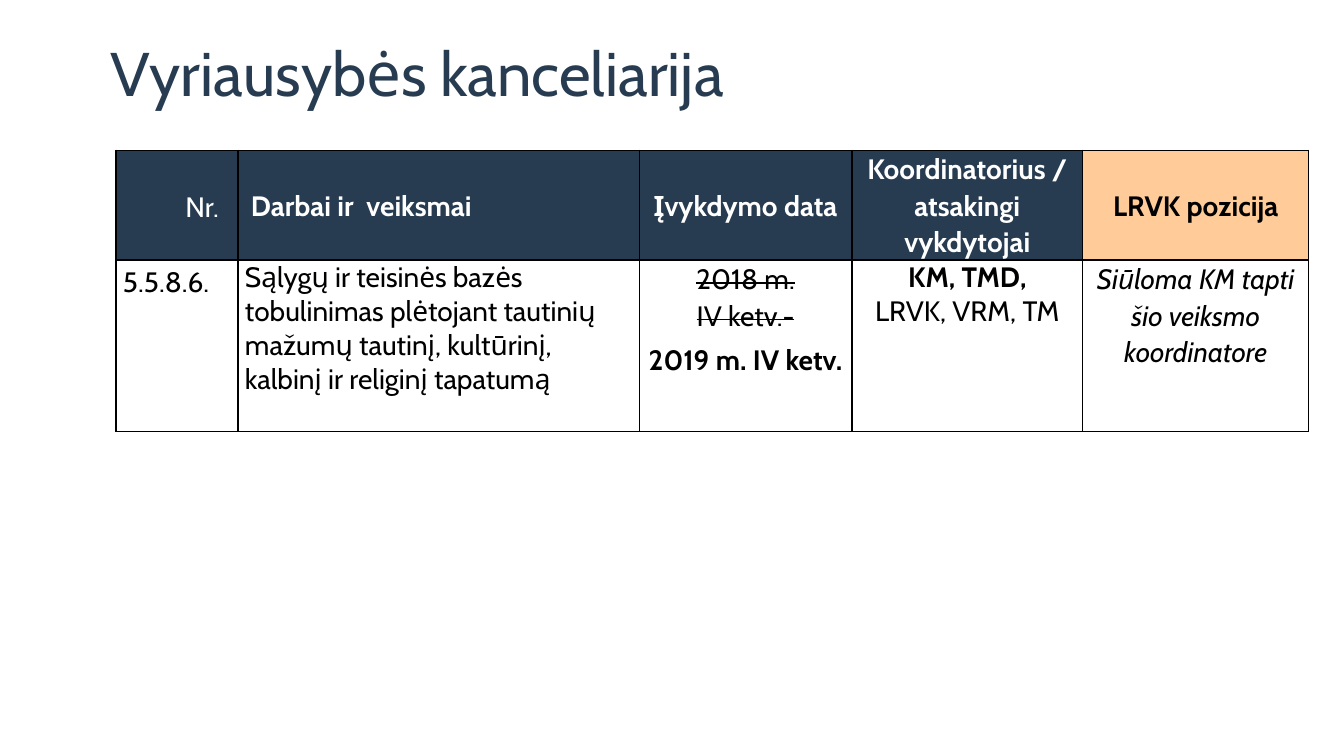
from dataclasses import dataclass

from lxml import etree
from pptx import Presentation
from pptx import util as u
from pptx.dml.color import RGBColor
from pptx.enum import text
from pptx.oxml.ns import qn

LEFT, CENTER, JUSTIFY = (text.PP_ALIGN.LEFT, text.PP_ALIGN.CENTER,
                         text.PP_ALIGN.JUSTIFY)


@dataclass(frozen=True)
class Theme:
    font: str = "Cabin"
    navy: str = "273B51"
    peach: str = "FFCC99"
    white: str = "FFFFFF"
    black: str = "000000"
    title_size: int = 44
    body_size: int = 20
    border: float = 1


class SlideBuilder:
    def __init__(self, prs, theme):
        self.theme = theme
        self.s = prs.slides.add_slide(prs.slide_layouts[5])

    def run(self, p, content, color, size, bold=False, italic=False, strike=False):
        r = p.add_run()
        r.text = content
        formats = {"name": self.theme.font, "size": u.Pt(size),
                   "bold": bold, "italic": italic}
        for key, value in formats.items():
            setattr(r.font, key, value)
        r.font.color.rgb = RGBColor.from_string(color)
        if strike:
            r.font._element.set("strike", "sngStrike")

    def title(self, content, left, top, width, height):
        sp = self.s.shapes.title
        box = {"left": left, "top": top, "width": width, "height": height}
        for key, value in box.items():
            setattr(sp, key, u.Inches(value))
        tf = sp.text_frame
        tf.word_wrap = True
        tf.auto_size = text.MSO_AUTO_SIZE.NONE
        tf.vertical_anchor = text.MSO_ANCHOR.MIDDLE
        p = tf.paragraphs[0]
        p.alignment = LEFT
        p.line_spacing = 0.9
        self.run(p, content, self.theme.navy, self.theme.title_size)

    def borders(self, cell):
        tcPr = cell._tc.get_or_add_tcPr()
        for i, side in enumerate(("lnL", "lnR", "lnT", "lnB")):
            ln = etree.Element(qn(f"a:{side}"), w=str(u.Pt(self.theme.border)))
            fill = etree.SubElement(ln, qn("a:solidFill"))
            etree.SubElement(fill, qn("a:srgbClr"), val=self.theme.black)
            tcPr.insert(i, ln)

    def cell(self, cell, paragraphs, anchor, fill=None, color=None):
        formats = {"margin_left": u.Inches(0.07), "margin_right": u.Inches(0.07),
                   "margin_top": 0, "margin_bottom": 0, "vertical_anchor": anchor}
        for key, value in formats.items():
            setattr(cell, key, value)
        if fill:
            cell.fill.solid()
            cell.fill.fore_color.rgb = RGBColor.from_string(fill)
        else:
            cell.fill.background()
        self.borders(cell)
        tf = cell.text_frame
        for i, item in enumerate(paragraphs):
            p = tf.paragraphs[0] if i == 0 else tf.add_paragraph()
            p.alignment = item.get("align", CENTER)
            p.line_spacing = item.get("spacing", 1.07)
            p.space_after = u.Pt(item.get("after", 6))
            if "indent" in item:
                p._p.get_or_add_pPr().set("marL", str(u.Inches(item["indent"])))
            for j, line in enumerate(item["text"].split("\n")):
                if j:
                    p.add_line_break()
                self.run(p, line, color or self.theme.black,
                         self.theme.body_size, **item.get("font", {}))

    def table(self, left, top, widths, heights, header, body):
        frame = self.s.shapes.add_table(
            len(heights), len(widths), u.Inches(left), u.Inches(top),
            u.Inches(sum(widths)), u.Inches(sum(heights)))
        table = frame.table
        table.first_row = table.horz_banding = False
        for column, width in zip(table.columns, widths):
            column.width = u.Inches(width)
        for row, height in zip(table.rows, heights):
            row.height = u.Inches(height)
        last = len(widths) - 1
        for c, item in enumerate(header):
            fill, color = ((self.theme.peach, self.theme.black) if c == last
                           else (self.theme.navy, self.theme.white))
            self.cell(table.cell(0, c), [item], text.MSO_ANCHOR.MIDDLE, fill, color)
        for c, paragraphs in enumerate(body):
            self.cell(table.cell(1, c), paragraphs, text.MSO_ANCHOR.TOP)


def main():
    prs = Presentation()
    prs.slide_width, prs.slide_height = u.Inches(13.33), u.Inches(7.5)
    slide = SlideBuilder(prs, Theme())
    slide.title("Vyriausybės kanceliarija", 1, 0.31, 11.33, 0.89)

    bold = {"bold": True}
    header = [
        {"text": "Nr.", "indent": 0.5, "spacing": 1.15},
        {"text": "Darbai ir  veiksmai", "align": LEFT, "indent": 0.06, "font": bold},
        {"text": "Įvykdymo data", "font": bold},
        {"text": "Koordinatorius / atsakingi vykdytojai", "font": bold},
        {"text": "LRVK pozicija", "font": bold},
    ]
    body = [
        [{"text": "5.5.8.6.", "align": JUSTIFY, "spacing": 1.15}],
        [{"text": "Sąlygų ir teisinės bazės tobulinimas plėtojant tautinių "
                  "mažumų tautinį, kultūrinį, kalbinį ir religinį tapatumą",
          "align": LEFT, "spacing": 1.0, "after": 0}],
        [{"text": "2018 m.\nIV ketv.-", "font": {"strike": True}},
         {"text": "2019 m. IV ketv.", "font": bold}],
        [{"text": "KM, TMD,", "spacing": 1.0, "after": 0, "font": bold},
         {"text": "LRVK, VRM, TM", "spacing": 1.0, "after": 0}],
        [{"text": "Siūloma KM tapti šio veiksmo koordinatore", "after": 0,
          "font": {"italic": True}}],
    ]
    slide.table(1.15, 1.49, [1.21, 3.98, 2.11, 2.29, 2.24], [1.09, 1.7],
                header, body)
    prs.save("out.pptx")


if __name__ == "__main__":
    main()
